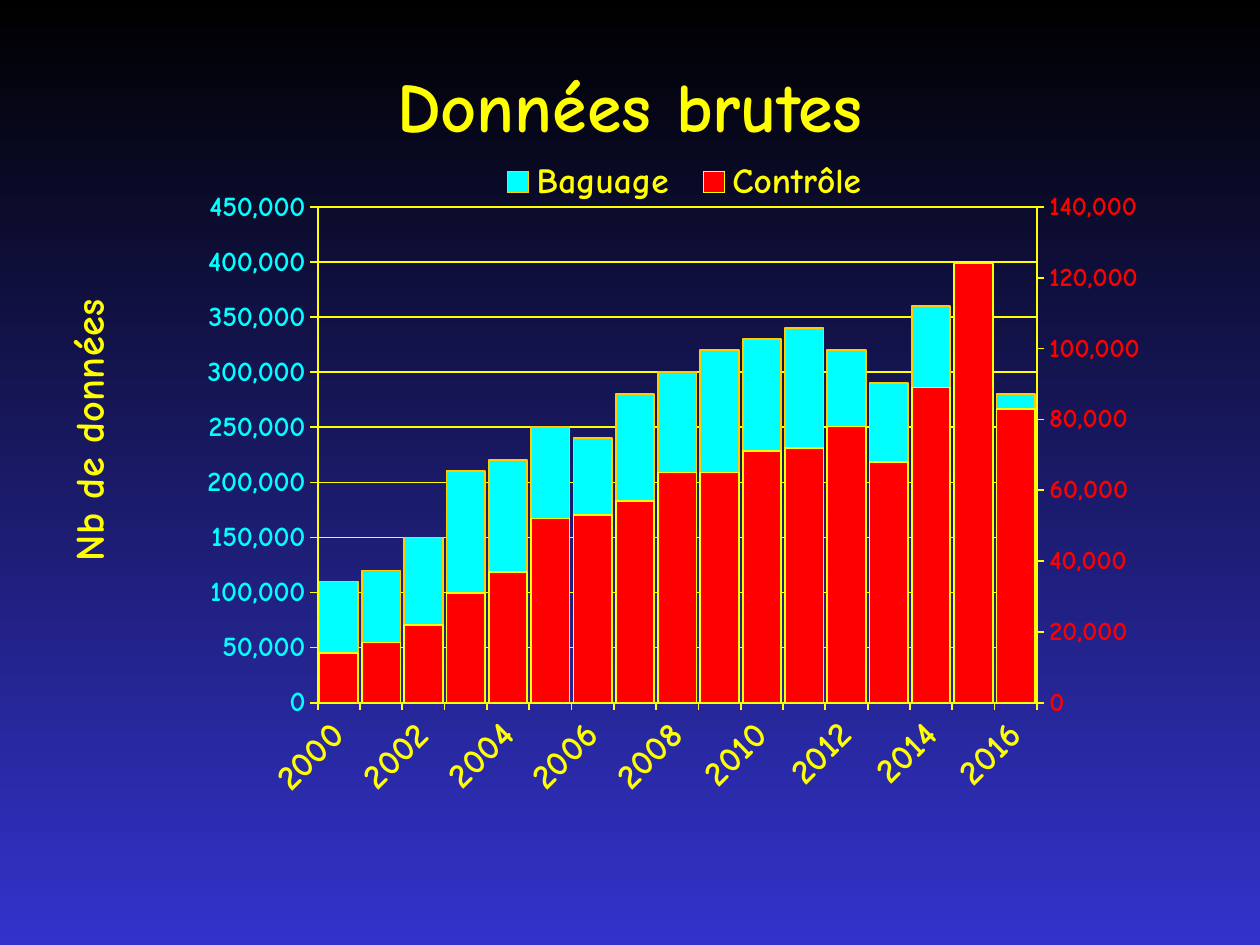
from copy import deepcopy

from lxml import etree
from pptx import Presentation
from pptx.chart.axis import ValueAxis
from pptx.chart.data import CategoryChartData
from pptx.dml.color import RGBColor
from pptx.enum.chart import XL_CHART_TYPE, XL_LEGEND_POSITION, XL_TICK_MARK
from pptx.enum.text import MSO_ANCHOR, PP_ALIGN
from pptx.oxml import parse_xml
from pptx.oxml.ns import qn
from pptx.util import Pt

COLUMN = XL_CHART_TYPE.COLUMN_CLUSTERED
RIGHT = XL_LEGEND_POSITION.RIGHT
OUT, NONE = XL_TICK_MARK.OUTSIDE, XL_TICK_MARK.NONE
MIDDLE, CENTER = MSO_ANCHOR.MIDDLE, PP_ALIGN.CENTER

# Content
TITLE = "Données brutes"
AXIS = "Nb de données"
YEARS = [str(year) for year in range(2000, 2017)]
RINGED = [110000, 120000, 150000, 210000, 220000, 250000, 240000, 280000, 300000,
          320000, 330000, 340000, 320000, 290000, 360000, 390000, 280000]
CHECKED = [14000, 17000, 22000, 31000, 37000, 52000, 53000, 57000, 65000,
           65000, 71000, 72000, 78000, 68000, 89000, 124000, 83000]
SERIES = [("Baguage", RINGED, "cyan", "gold"), ("Contrôle", CHECKED, "red", "yellow")]

THEME = {
    "font": "Comic Neue",
    "color": {"top": "000000", "base": "3333CC", "yellow": "FFFF00",
              "gold": "FFCC00", "cyan": "00FFFF", "red": "FF0000"},
    "size": {"title": 40, "axis": 23, "legend": 20.2, "year": 20, "left": 16, "right": 15},
}


def color(name):
    return RGBColor.from_string(THEME["color"][name])


def style(font, size, tone):
    font.name, font.bold = THEME["font"], True
    font.size = Pt(THEME["size"][size])
    font.color.rgb = color(tone)


def write(frame, text, size="title", tone="yellow", align=CENTER):
    para = frame.paragraphs[0]
    para.alignment = align
    run = para.add_run()
    run.text = text
    style(run.font, size, tone)
    return run


def stroke(line, tone="yellow"):
    line.color.rgb = color(tone)
    line.width = Pt(1)


def node(tag, val):
    item = etree.Element(qn(tag))
    item.set("val", str(val))
    return item


def layout(x, y, w=None, h=None, inner=False):
    box = etree.Element(qn("c:layout"))
    spot = etree.SubElement(box, qn("c:manualLayout"))
    if inner:
        spot.append(node("c:layoutTarget", "inner"))
    spot.extend([node("c:xMode", "edge"), node("c:yMode", "edge")])
    for key, val in zip("xywh", (x, y, w, h)):
        if val is not None:
            spot.append(node("c:" + key, val))
    return box


def place(part, box):
    for old in part.findall(qn("c:layout")):
        part.remove(old)
    part.find(qn("c:overlay")).addprevious(box)


def scale(axis, top, step, size, tone):
    axis.minimum_scale, axis.maximum_scale, axis.major_unit = 0, top, step
    axis.major_tick_mark, axis.minor_tick_mark = OUT, NONE
    axis.tick_labels.number_format = "#,##0"
    axis.tick_labels.number_format_is_linked = False
    style(axis.tick_labels.font, size, tone)
    stroke(axis.format.line)


def split(area):
    """Move the last series to a second bar group with its own right axis."""
    bars, cat, val = (area.find(qn(tag)) for tag in ("c:barChart", "c:catAx", "c:valAx"))
    twins = [deepcopy(part) for part in (bars, cat, val)]
    bars.remove(bars.findall(qn("c:ser"))[-1])
    twins[0].remove(twins[0].find(qn("c:ser")))
    ids = {cat.find(qn("c:axId")).get("val"): "5001",
           val.find(qn("c:axId")).get("val"): "5002"}
    for twin in twins:
        for tag in ("c:axId", "c:crossAx"):
            for ref in twin.findall(qn(tag)):
                ref.set("val", ids[ref.get("val")])
    group, years, right = twins
    for tag in ("c:majorGridlines", "c:title"):
        right.remove(right.find(qn(tag)))
    years.find(qn("c:delete")).set("val", "1")
    right.find(qn("c:axPos")).set("val", "r")
    right.find(qn("c:crosses")).set("val", "max")
    bars.addnext(group)
    val.addnext(right)
    right.addnext(years)
    return ValueAxis(right)


deck = Presentation()
deck.slide_width, deck.slide_height = Pt(720), Pt(540)
slide = deck.slides.add_slide(deck.slide_layouts[6])

# Background
fill = slide.background.fill
fill.gradient()
fill.gradient_angle = 270
for stop, tone in zip(fill.gradient_stops, ("top", "base")):
    stop.color.rgb = color(tone)

# Title with a text shadow
frame = slide.shapes.add_textbox(Pt(54), Pt(15), Pt(612), Pt(90)).text_frame
frame.word_wrap, frame.vertical_anchor = True, MIDDLE
head = write(frame, TITLE)
head.font.fill._xPr.find(qn("a:solidFill")).addnext(parse_xml(
    '<a:effectLst xmlns:a="http://schemas.openxmlformats.org/drawingml/2006/main">'
    '<a:outerShdw blurRad="38100" dist="38100" dir="2700000">'
    '<a:srgbClr val="000000"/></a:outerShdw></a:effectLst>'))

# Chart
data = CategoryChartData(number_format="#,##0")
data.categories = YEARS
for name, vals, *_ in SERIES:
    data.add_series(name, vals)
chart = slide.shapes.add_chart(COLUMN, Pt(21), Pt(83.5), Pt(692), Pt(440), data).chart
chart.has_title = False
style(chart.font, "axis", "yellow")
plot = chart.plots[0]
plot.gap_width, plot.overlap, plot.vary_by_categories = 10, 100, False
for ser, (_, _, tone, edge) in zip(plot.series, SERIES):
    ser.format.fill.solid()
    ser.format.fill.fore_color.rgb = color(tone)
    stroke(ser.format.line, edge)

# Year axis, every second label, slanted
years = chart.category_axis
years.major_tick_mark, years.minor_tick_mark = OUT, NONE
style(years.tick_labels.font, "year", "yellow")
stroke(years.format.line)
years._element.find(qn("c:txPr")).find(qn("a:bodyPr")).set("rot", "-2700000")
years._element.find(qn("c:noMultiLvlLbl")).addprevious(node("c:tickLblSkip", 2))
years._element.find(qn("c:noMultiLvlLbl")).addprevious(node("c:tickMarkSkip", 1))

# Value axes
left = chart.value_axis
left.has_major_gridlines = True
stroke(left.major_gridlines.format.line)
scale(left, 450000, 50000, "left", "cyan")
name = left.axis_title
write(name.text_frame, AXIS, size="axis")
turn = name.text_frame._txBody.find(qn("a:bodyPr"))
turn.set("rot", "-5400000")
turn.set("vert", "horz")
place(name._element, layout(0.015, 0.19))
area = chart._chartSpace.chart.plotArea
scale(split(area), 140000, 20000, "right", "red")

# Legend and plot position
chart.has_legend = True
legend = chart.legend
legend.position, legend.include_in_layout = RIGHT, False
style(legend.font, "legend", "yellow")
place(legend._element, layout(0.37, 0.02, 0.33, 0.05))
for old in area.findall(qn("c:layout")):
    area.remove(old)
area.insert(0, layout(0.232, 0.079, 0.594, 0.644, inner=True))

deck.save("out.pptx")
